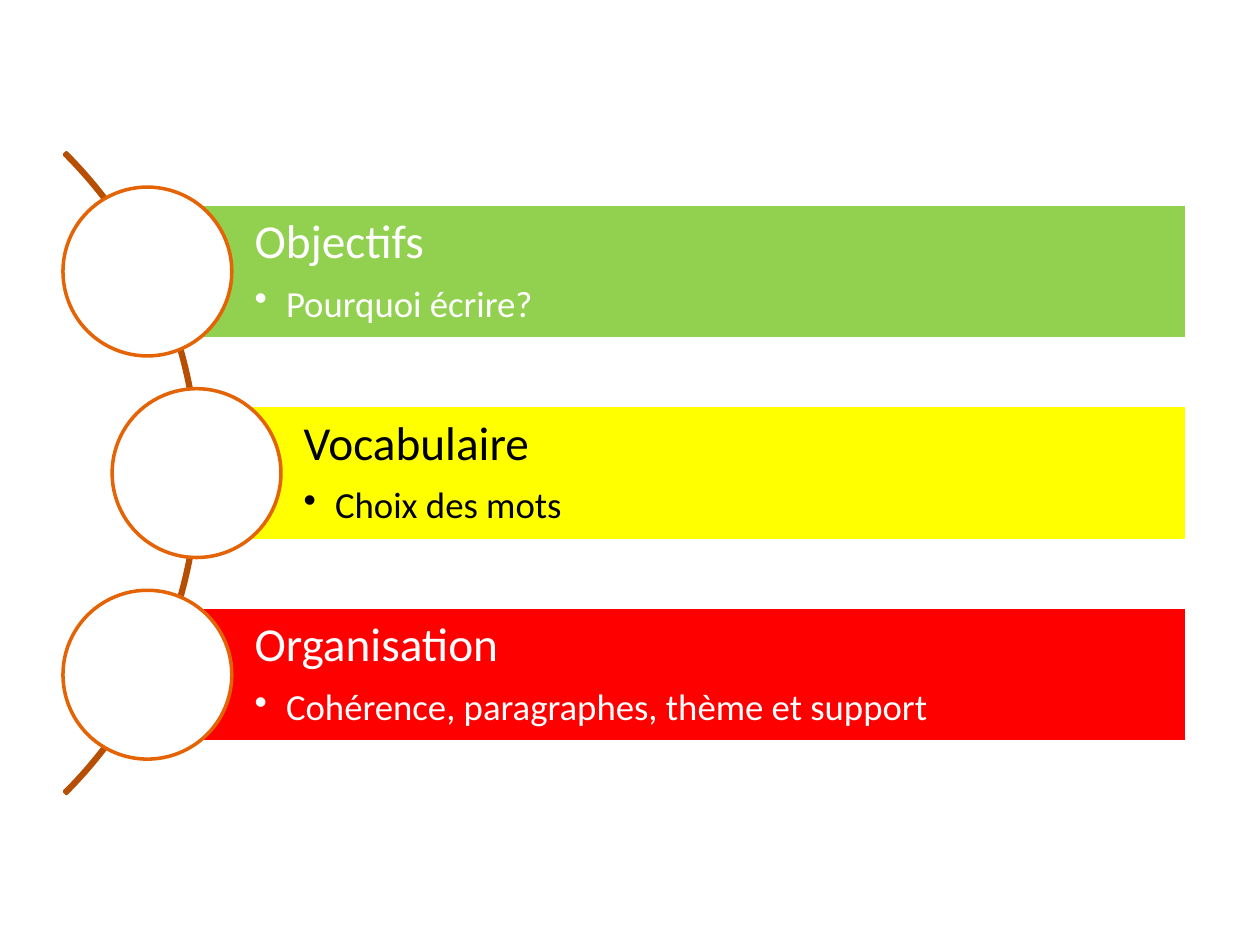
from dataclasses import dataclass

from lxml.etree import SubElement
from pptx import Presentation
from pptx.dml.color import RGBColor as RGB
from pptx.enum.shapes import MSO_SHAPE as Kind
from pptx.enum.text import MSO_ANCHOR as Anchor, PP_ALIGN as Align
from pptx.oxml.ns import qn
from pptx.util import Inches, Pt


@dataclass(frozen=True)
class Theme:
    font: str = "Calibri"
    head: int = 27
    body: int = 21
    white: str = "FFFFFF"
    black: str = "000000"
    green: str = "92D050"
    yellow: str = "FFFF00"
    red: str = "FF0000"
    ring: str = "E36305"
    arc: str = "B64F04"
    line: int = 2


THEME = Theme()
RIGHT = 9.42
BAR = 1.07
DISC = 1.34
TOP = 1.62
STEP = 1.6

# heading, point, fill, ink, left edge of the bar
ROWS = [
    ("Objectifs", "Pourquoi écrire?", THEME.green, THEME.white, 1.17),
    ("Vocabulaire", "Choix des mots", THEME.yellow, THEME.black, 1.56),
    ("Organisation", "Cohérence, paragraphes, thème et support",
     THEME.red, THEME.white, 1.17),
]


def add_shape(slide, kind, box, line, fill=None):
    shape = slide.shapes.add_shape(kind, *map(Inches, box))
    shape.shadow.inherit = False
    if fill:
        shape.fill.solid()
        shape.fill.fore_color.rgb = RGB.from_string(fill)
    else:
        shape.fill.background()
    shape.line.color.rgb = RGB.from_string(line)
    shape.line.width = Pt(THEME.line)
    return shape


def add_arc(slide):
    arc = add_shape(slide, Kind.BLOCK_ARC, (-5.61, 0.16, 7.19, 7.19), THEME.arc)
    # Angles are in 60000ths of a degree, scaled by 100000: 315 to 45 degrees
    for i, value in enumerate((189, 27, 0.003)):
        arc.adjustments[i] = value


def add_bullet(para):
    props = para._p.get_or_add_pPr()
    props.set("marL", str(Inches(0.25)))
    props.set("indent", str(Inches(-0.25)))
    SubElement(props, qn("a:buChar"), char="•")


def style(para, size, ink, after):
    looks = {"alignment": Align.LEFT, "line_spacing": 0.9,
             "space_after": Pt(size * after)}
    for name, value in looks.items():
        setattr(para, name, value)
    face = {"name": THEME.font, "size": Pt(size)}
    for name, value in face.items():
        setattr(para.font, name, value)
    para.font.color.rgb = RGB.from_string(ink)


def write(shape, head, point, ink):
    frame = shape.text_frame
    layout = {"word_wrap": True, "vertical_anchor": Anchor.MIDDLE,
              "margin_left": Inches(0.85), "margin_top": Inches(0.07),
              "margin_right": Inches(0.07), "margin_bottom": Inches(0.07)}
    for name, value in layout.items():
        setattr(frame, name, value)
    title = frame.paragraphs[0]
    title.text = head
    style(title, THEME.head, ink, 0.35)
    item = frame.add_paragraph()
    item.text = point
    item.level = 1
    add_bullet(item)
    style(item, THEME.body, ink, 0.15)


def add_row(slide, top, head, point, fill, ink, left):
    """Draw a bar with its text and a disc centred on the bar's left edge."""
    bar = add_shape(slide, Kind.RECTANGLE, (left, top, RIGHT - left, BAR),
                    THEME.white, fill)
    write(bar, head, point, ink)
    disc = (left - DISC / 2, top + (BAR - DISC) / 2, DISC, DISC)
    add_shape(slide, Kind.OVAL, disc, THEME.ring, THEME.white)


def main():
    deck = Presentation()
    deck.slide_width, deck.slide_height = Inches(10), Inches(7.5)
    slide = deck.slides.add_slide(deck.slide_layouts[6])
    add_arc(slide)
    for i, row in enumerate(ROWS):
        add_row(slide, TOP + i * STEP, *row)
    deck.save("out.pptx")


if __name__ == "__main__":
    main()
